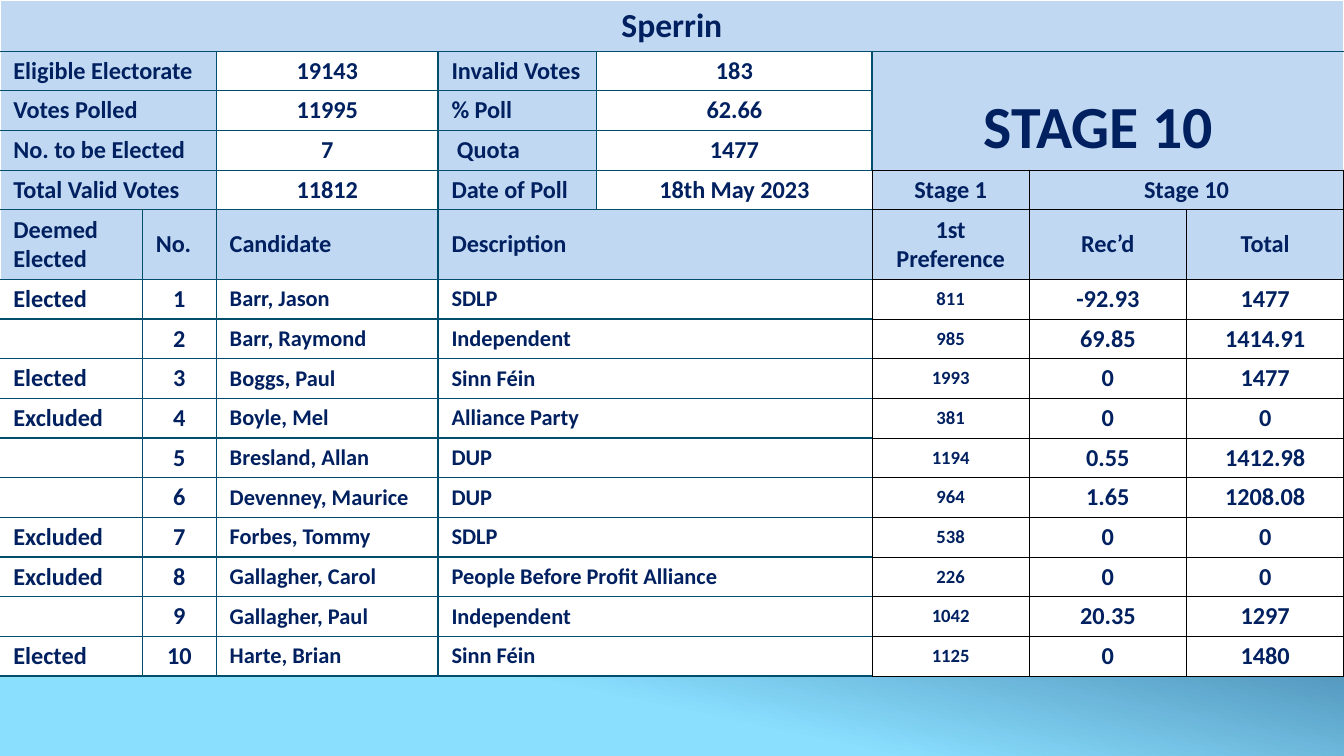
import pptx
import pptx.dml.color
import pptx.enum.text
import pptx.oxml
import pptx.oxml.ns
import pptx.util

Pt = pptx.util.Pt
NAVY, TEAL, BLACK, WHITE, PALE = "002060", "004E6C", "000000", "FFFFFF", "C1D8F2"
NO_STYLE = "{2D5ABB26-0587-4C30-8999-92F81FD0307C}"
COLUMN_WIDTHS = [76.3, 39.6, 118.8, 85, 147.5, 84.2, 84.3, 84.3]
TITLE_HEIGHT, HEADER_HEIGHT, ROW_HEIGHT = 27.3, 37.2, 21.2
HEADER_ROW = 5

SUMMARY = [
    ["Eligible Electorate", "", "19143", "Invalid Votes", "183", "STAGE 10 ", "", ""],
    ["Votes Polled", "", "11995", "% Poll", "62.66", "", "", ""],
    ["No. to be Elected", "", "7", " Quota", "1477", "", "", ""],
    ["Total Valid Votes", "", "11812", "Date of Poll", "18th May 2023", "Stage 1", "Stage 10", ""],
]
HEADER = ["Deemed Elected", "No.", "Candidate", "Description", "", "1st Preference", "Rec’d", "Total"]
CANDIDATES = [
    ("Elected", "Barr, Jason", "SDLP", "811", "-92.93", "1477"),
    ("", "Barr, Raymond", "Independent", "985", "69.85", "1414.91"),
    ("Elected", "Boggs, Paul", "Sinn Féin", "1993", "0", "1477"),
    ("Excluded", "Boyle, Mel", "Alliance Party", "381", "0", "0"),
    ("", "Bresland, Allan", "DUP", "1194", "0.55", "1412.98"),
    ("", "Devenney, Maurice", "DUP", "964", "1.65", "1208.08"),
    ("Excluded", "Forbes, Tommy", "SDLP", "538", "0", "0"),
    ("Excluded", "Gallagher, Carol", "People Before Profit Alliance", "226", "0", "0"),
    ("", "Gallagher, Paul", "Independent", "1042", "20.35", "1297"),
    ("Elected", "Harte, Brian", "Sinn Féin", "1125", "0", "1480"),
]


def color(value):
    return pptx.dml.color.RGBColor.from_string(value)


def set_background(slide):
    fill = slide.background.fill
    fill.gradient()
    fill.gradient_angle = 258
    for stop, position, value in zip(fill.gradient_stops, (0.42, 0.82), ("0D3868", "8ADFFF")):
        stop.position = position
        stop.color.rgb = color(value)


def result_rows():
    rows = [["Sperrin"] + [""] * 7] + SUMMARY + [HEADER]
    for number, (status, name, description, first, received, total) in enumerate(CANDIDATES, 1):
        rows.append([status, str(number), name, description, "", first, received, total])
    return rows


def merge_cells(table):
    last_row = len(table.rows) - 1
    spans = [(0, 0, 0, 7), (1, 5, 3, 7), (4, 6, 4, 7)]
    spans += [(row, 0, row, 1) for row in range(1, HEADER_ROW)]
    spans += [(row, 3, row, 4) for row in range(HEADER_ROW, last_row + 1)]
    for top, left, bottom, right in spans:
        table.cell(top, left).merge(table.cell(bottom, right))


def font_size(row, column):
    if row == 0:
        return 18
    if (row, column) == (1, 5):
        return 32
    if row > HEADER_ROW:
        return {2: 12, 3: 12, 5: 10}.get(column, 13)
    return 13


def cell_fill(row, column):
    is_value = 0 < row < HEADER_ROW and column in (2, 4)
    return WHITE if is_value or row > HEADER_ROW else PALE


def is_left_aligned(row, column):
    if row == 0:
        return False
    return column in (0, 3) or (row >= HEADER_ROW and column == 2) or (row, column) == (HEADER_ROW, 1)


def cell_borders(row, column):
    white, teal, black = (WHITE, 1), (TEAL, 0.75), (BLACK, 0.5)
    if row == 0:
        return white, white, white, teal
    if (row, column) == (1, 5):
        return teal, white, teal, black
    if column >= 5:
        return black, black, black, black
    left = white if column == 0 else teal
    meets_stages = (row == 4 and column == 4) or (row >= HEADER_ROW and column == 3)
    return left, black if meets_stages else teal, teal, teal


def set_borders(cell, borders):
    properties = cell._tc.get_or_add_tcPr()
    namespace = pptx.oxml.ns.nsdecls("a")
    for index, (side, (value, width)) in enumerate(zip("LRTB", borders)):
        properties.insert(index, pptx.oxml.parse_xml(
            f'<a:ln{side} {namespace} w="{Pt(width)}"><a:solidFill>'
            f'<a:srgbClr val="{value}"/></a:solidFill></a:ln{side}>'))


def format_run(run, size):
    run.font.name = "Calibri"
    run.font.size = Pt(size)
    run.font.bold = True
    run.font.color.rgb = color(NAVY)


def fill_cell(cell, text, row, column):
    cell.margin_left = cell.margin_right = Pt(7.2)
    cell.margin_top = cell.margin_bottom = Pt(2.7)
    anchors = pptx.enum.text.MSO_ANCHOR
    is_stage = (row, column) == (1, 5)
    cell.vertical_anchor = anchors.BOTTOM if is_stage else anchors.MIDDLE
    cell.fill.solid()
    cell.fill.fore_color.rgb = color(cell_fill(row, column))
    set_borders(cell, cell_borders(row, column))
    cell.text_frame.text = text
    paragraph = cell.text_frame.paragraphs[0]
    alignments = pptx.enum.text.PP_ALIGN
    paragraph.alignment = alignments.LEFT if is_left_aligned(row, column) else alignments.CENTER
    size = font_size(row, column)
    for run in paragraph.runs:
        format_run(run, size)
    if is_stage:
        spacer = paragraph.add_run()
        spacer.text = " "
        format_run(spacer, 13)
    if not text:
        namespace = pptx.oxml.ns.nsdecls("a")
        paragraph._p.append(pptx.oxml.parse_xml(f'<a:endParaRPr {namespace} sz="{size * 100}"/>'))


def add_results_table(slide):
    rows = result_rows()
    heights = [TITLE_HEIGHT] + [ROW_HEIGHT] * 4 + [HEADER_HEIGHT] + [ROW_HEIGHT] * len(CANDIDATES)
    shape = slide.shapes.add_table(
        len(rows), len(COLUMN_WIDTHS), Pt(0), Pt(0), Pt(sum(COLUMN_WIDTHS)), Pt(sum(heights)))
    table = shape.table
    table.first_row = table.horz_banding = False
    table._tbl.tblPr.find(pptx.oxml.ns.qn("a:tableStyleId")).text = NO_STYLE
    for column, width in zip(table.columns, COLUMN_WIDTHS):
        column.width = Pt(width)
    for table_row, height in zip(table.rows, heights):
        table_row.height = Pt(height)
    merge_cells(table)
    for row, texts in enumerate(rows):
        for column, text in enumerate(texts):
            cell = table.cell(row, column)
            if not cell.is_spanned:
                fill_cell(cell, text, row, column)


def main():
    presentation = pptx.Presentation()
    presentation.slide_width = Pt(720)
    presentation.slide_height = Pt(405)
    slide = presentation.slides.add_slide(presentation.slide_layouts[6])
    set_background(slide)
    add_results_table(slide)
    presentation.save("out.pptx")


if __name__ == "__main__":
    main()
